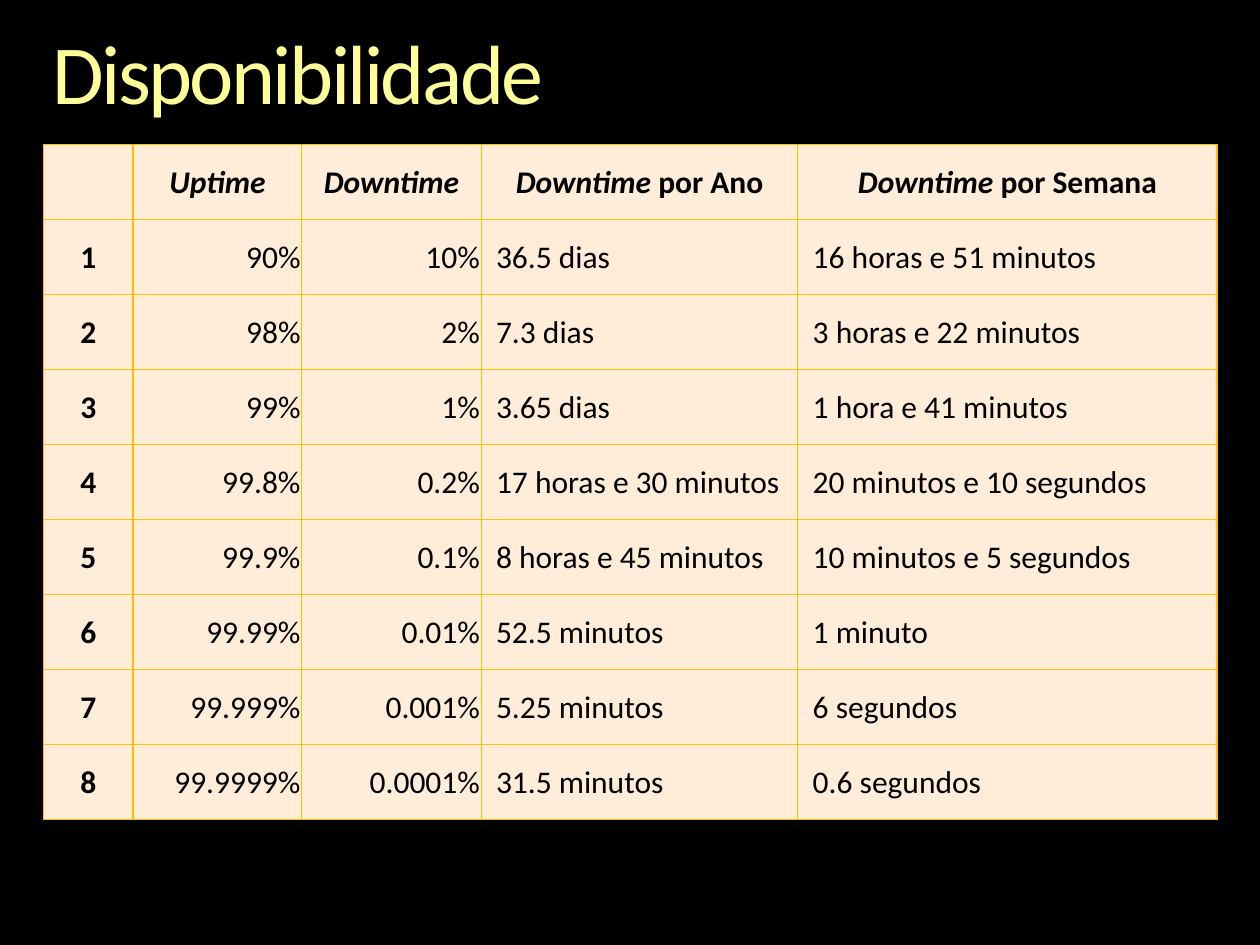
"""Build the availability slide: a title above a table of uptime levels."""
import lxml.etree
import pptx
import pptx.dml.color
import pptx.enum.text
import pptx.oxml.ns
import pptx.util

Pt = pptx.util.Pt
ALIGN = pptx.enum.text.PP_ALIGN
BLACK = pptx.dml.color.RGBColor(0x00, 0x00, 0x00)
YELLOW = pptx.dml.color.RGBColor(0xFF, 0xFF, 0x99)
CREAM = pptx.dml.color.RGBColor(0xFF, 0xEC, 0xD9)
GOLD = pptx.dml.color.RGBColor(0xFF, 0xC0, 0x00)

COLUMN_WIDTHS = (51, 96.5, 102.5, 181, 239.5)
COLUMN_ALIGNS = (ALIGN.CENTER, ALIGN.RIGHT, ALIGN.RIGHT, ALIGN.JUSTIFY, ALIGN.JUSTIFY)
ROW_HEIGHT = 42.85
HEADERS = (("", ""), ("Uptime", ""), ("Downtime", ""),
           ("Downtime ", "por Ano"), ("Downtime ", "por Semana"))
LEVELS = (
    ("1", "90%", "10%", "36.5 dias", "16 horas e 51 minutos"),
    ("2", "98%", "2%", "7.3 dias", "3 horas e 22 minutos"),
    ("3", "99%", "1%", "3.65 dias", "1 hora e 41 minutos"),
    ("4", "99.8%", "0.2%", "17 horas e 30 minutos", "20 minutos e 10 segundos"),
    ("5", "99.9%", "0.1%", "8 horas e 45 minutos", "10 minutos e 5 segundos"),
    ("6", "99.99%", "0.01%", "52.5 minutos", "1 minuto"),
    ("7", "99.999%", "0.001%", "5.25 minutos", "6 segundos"),
    ("8", "99.9999%", "0.0001%", "31.5 minutos", "0.6 segundos"),
)


def add_text(para, text, size=18, color=BLACK, bold=False, italic=False):
    """Append a formatted run to a paragraph and return it."""
    span = para.add_run()
    span.text = text
    span.font.name = "Calibri"
    span.font.size = Pt(size)
    span.font.color.rgb = color
    span.font.bold = bold
    span.font.italic = italic
    return span


def add_title(page, text):
    """Add the slide title with tightened letters."""
    box = page.shapes.add_textbox(Pt(30), Pt(18), Pt(660), Pt(52.5))
    frame = box.text_frame
    frame.word_wrap = True
    frame.margin_left = frame.margin_right = Pt(0)
    frame.margin_top = frame.margin_bottom = Pt(0)
    para = frame.paragraphs[0]
    para.line_spacing = 0.9
    span = add_text(para, text, size=48, color=YELLOW)
    span.font._element.set("spc", "-150")


def add_borders(cell):
    """Draw a thin gold line on all four sides of a cell."""
    qualify = pptx.oxml.ns.qn
    properties = cell._tc.get_or_add_tcPr()
    for position, side in enumerate(("a:lnL", "a:lnR", "a:lnT", "a:lnB")):
        line = lxml.etree.Element(qualify(side), w=str(Pt(0.75)))
        fill = lxml.etree.SubElement(line, qualify("a:solidFill"))
        lxml.etree.SubElement(fill, qualify("a:srgbClr"), val=str(GOLD))
        properties.insert(position, line)


def format_cell(cell, align):
    """Set fill, borders, margins and alignment; return the cell's paragraph."""
    cell.fill.solid()
    cell.fill.fore_color.rgb = CREAM
    add_borders(cell)
    cell.vertical_anchor = pptx.enum.text.MSO_ANCHOR.MIDDLE
    cell.margin_left = Pt(8.5 if align == ALIGN.JUSTIFY else 0.75)
    cell.margin_right = cell.margin_top = Pt(0.75)
    cell.margin_bottom = Pt(0)
    para = cell.text_frame.paragraphs[0]
    para.alignment = align
    return para


def add_levels_table(page):
    """Add the table with its header row and one row per level."""
    row_count = len(LEVELS) + 1
    frame = page.shapes.add_table(
        row_count, len(COLUMN_WIDTHS), Pt(25), Pt(82.75),
        Pt(sum(COLUMN_WIDTHS)), Pt(ROW_HEIGHT * row_count))
    table = frame.table
    table.first_row = table.horz_banding = False
    for column, width in zip(table.columns, COLUMN_WIDTHS):
        column.width = Pt(width)
    for row in table.rows:
        row.height = Pt(ROW_HEIGHT)
    for column, (term, rest) in enumerate(HEADERS):
        para = format_cell(table.cell(0, column), ALIGN.CENTER)
        if term:
            add_text(para, term, bold=True, italic=True)
        if rest:
            add_text(para, rest, bold=True)
    for row, level in enumerate(LEVELS, start=1):
        for column, (text, align) in enumerate(zip(level, COLUMN_ALIGNS)):
            para = format_cell(table.cell(row, column), align)
            add_text(para, text, bold=column == 0)


def main():
    """Create and save the deck."""
    deck = pptx.Presentation()
    deck.slide_width, deck.slide_height = Pt(720), Pt(540)
    page = deck.slides.add_slide(deck.slide_layouts[6])
    page.background.fill.solid()
    page.background.fill.fore_color.rgb = BLACK
    add_title(page, "Disponibilidade")
    add_levels_table(page)
    deck.save("out.pptx")


if __name__ == "__main__":
    main()
